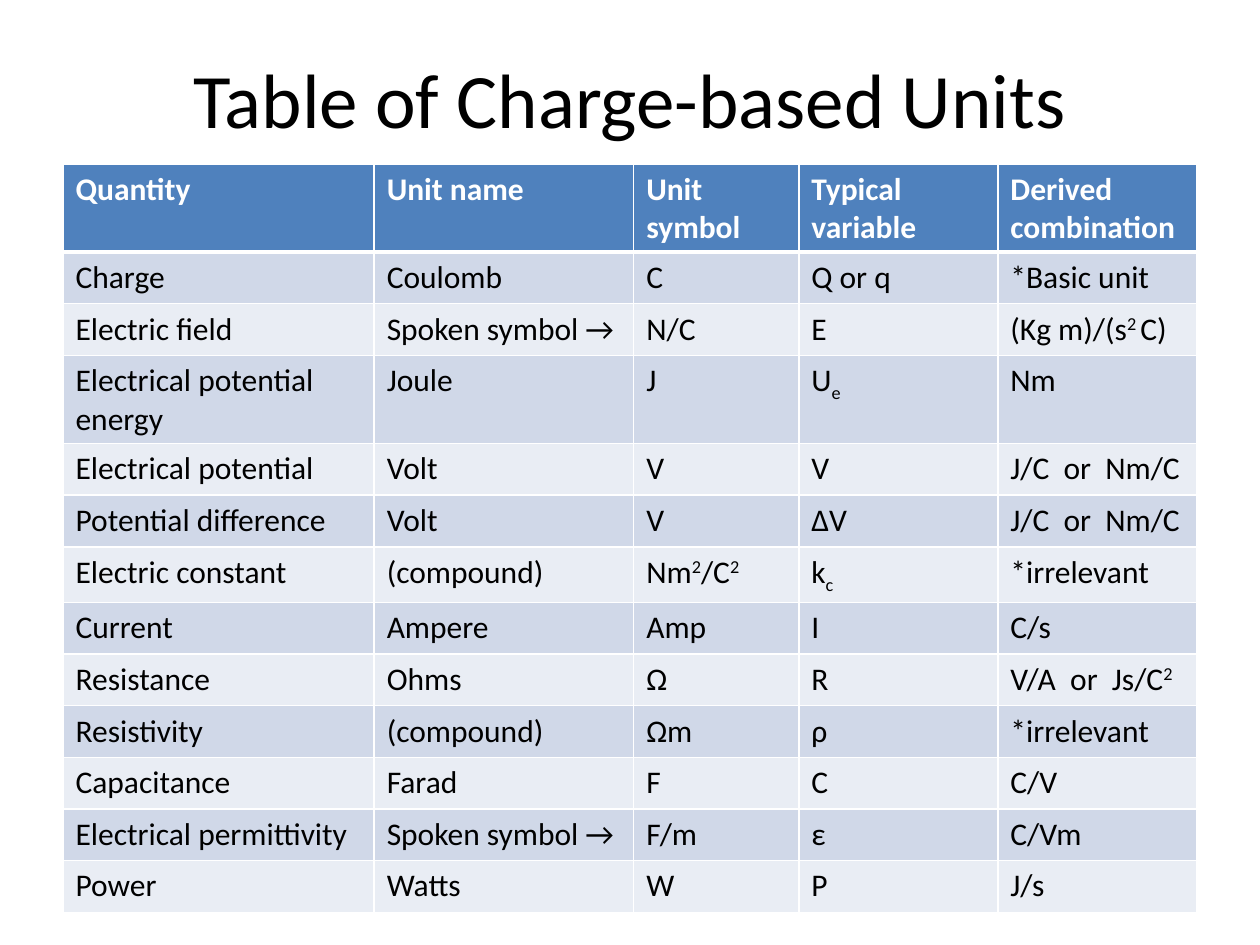
from lxml import etree
from pptx import Presentation
from pptx.dml.color import RGBColor
from pptx.enum.text import MSO_ANCHOR, PP_ALIGN
from pptx.oxml.ns import qn
from pptx.util import Inches, Pt

MIDDLE, CENTER = MSO_ANCHOR.MIDDLE, PP_ALIGN.CENTER
FONT = "Calibri"
COLORS = {"head": "4F81BD", "odd": "D0D8E8", "even": "E9EDF4",
          "light": "FFFFFF", "dark": "000000"}
TITLE = "Table of Charge-based Units"
# ^x^ marks a superscript, _x_ a subscript
ROWS = [
    ("Quantity", "Unit name", "Unit symbol", "Typical variable", "Derived combination"),
    ("Charge", "Coulomb", "C", "Q or q", "*Basic unit"),
    ("Electric field", "Spoken symbol →", "N/C", "E", "(Kg m)/(s^2 ^C)"),
    ("Electrical potential energy", "Joule", "J", "U_e_", "Nm"),
    ("Electrical potential", "Volt", "V", "V", "J/C  or  Nm/C"),
    ("Potential difference", "Volt", "V", "ΔV", "J/C  or  Nm/C"),
    ("Electric constant", "(compound)", "Nm^2^/C^2^", "k_c_", "*irrelevant"),
    ("Current", "Ampere", "Amp", "I", "C/s"),
    ("Resistance", "Ohms", "Ω", "R", "V/A  or  Js/C^2^"),
    ("Resistivity", "(compound)", "Ωm", "ρ", "*irrelevant"),
    ("Capacitance", "Farad", "F", "C", "C/V"),
    ("Electrical permittivity", "Spoken symbol →", "F/m", "ε", "C/Vm"),
    ("Power", "Watts", "W", "P", "J/s"),
]
WIDTHS = (2.47, 2.06, 1.31, 1.58, 1.58)
LINE, TALL = 0.41, 0.7
TALL_ROWS = (0, 3)
SHIFTS = {"^": 30000, "_": -25000}


def style(run, size, color, bold=False):
    font = run.font
    font.name, font.size, font.bold = FONT, Pt(size), bold
    font.color.rgb = RGBColor.from_string(COLORS[color])


def write(cell, text, color, bold):
    """Fill a cell, raising or lowering the marked parts."""
    mark = "_" if "_" in text else "^"
    para = cell.text_frame.paragraphs[0]
    for i, part in enumerate(text.split(mark)):
        if part:
            run = para.add_run()
            run.text = part
            style(run, 18, color, bold)
            if i % 2:
                run.font._element.set("baseline", str(SHIFTS[mark]))


def edge(cell, row):
    """Draw white borders, thick between header and body."""
    props = cell._tc.get_or_add_tcPr()
    thick = {0: "lnB", 1: "lnT"}.get(row)
    for side in ("lnL", "lnR", "lnT", "lnB"):
        width = Pt(3 if side == thick else 1)
        line = etree.SubElement(props, qn("a:" + side), w=str(width))
        fill = etree.SubElement(line, qn("a:solidFill"))
        etree.SubElement(fill, qn("a:srgbClr"), val=COLORS["light"])


def main():
    deck = Presentation()
    deck.slide_width, deck.slide_height = Inches(10), Inches(7.5)
    slide = deck.slides.add_slide(deck.slide_layouts[6])

    box = slide.shapes.add_textbox(Inches(0.5), Inches(0.3), Inches(9), Inches(0.95))
    frame = box.text_frame
    frame.word_wrap, frame.vertical_anchor = True, MIDDLE
    frame.text = TITLE
    para = frame.paragraphs[0]
    para.alignment = CENTER
    style(para.runs[0], 44, "dark")

    highs = [TALL if r in TALL_ROWS else LINE for r in range(len(ROWS))]
    table = slide.shapes.add_table(
        len(ROWS), len(WIDTHS), Inches(0.5), Inches(1.3),
        Inches(sum(WIDTHS)), Inches(sum(highs))).table
    for col, width in zip(table.columns, WIDTHS):
        col.width = Inches(width)
    for r, (row, high) in enumerate(zip(ROWS, highs)):
        table.rows[r].height = Inches(high)
        head = r == 0
        back = "head" if head else "odd" if r % 2 else "even"
        for c, text in enumerate(row):
            cell = table.cell(r, c)
            write(cell, text, "light" if head else "dark", head)
            edge(cell, r)
            cell.fill.solid()
            cell.fill.fore_color.rgb = RGBColor.from_string(COLORS[back])
    deck.save("out.pptx")


if __name__ == "__main__":
    main()
